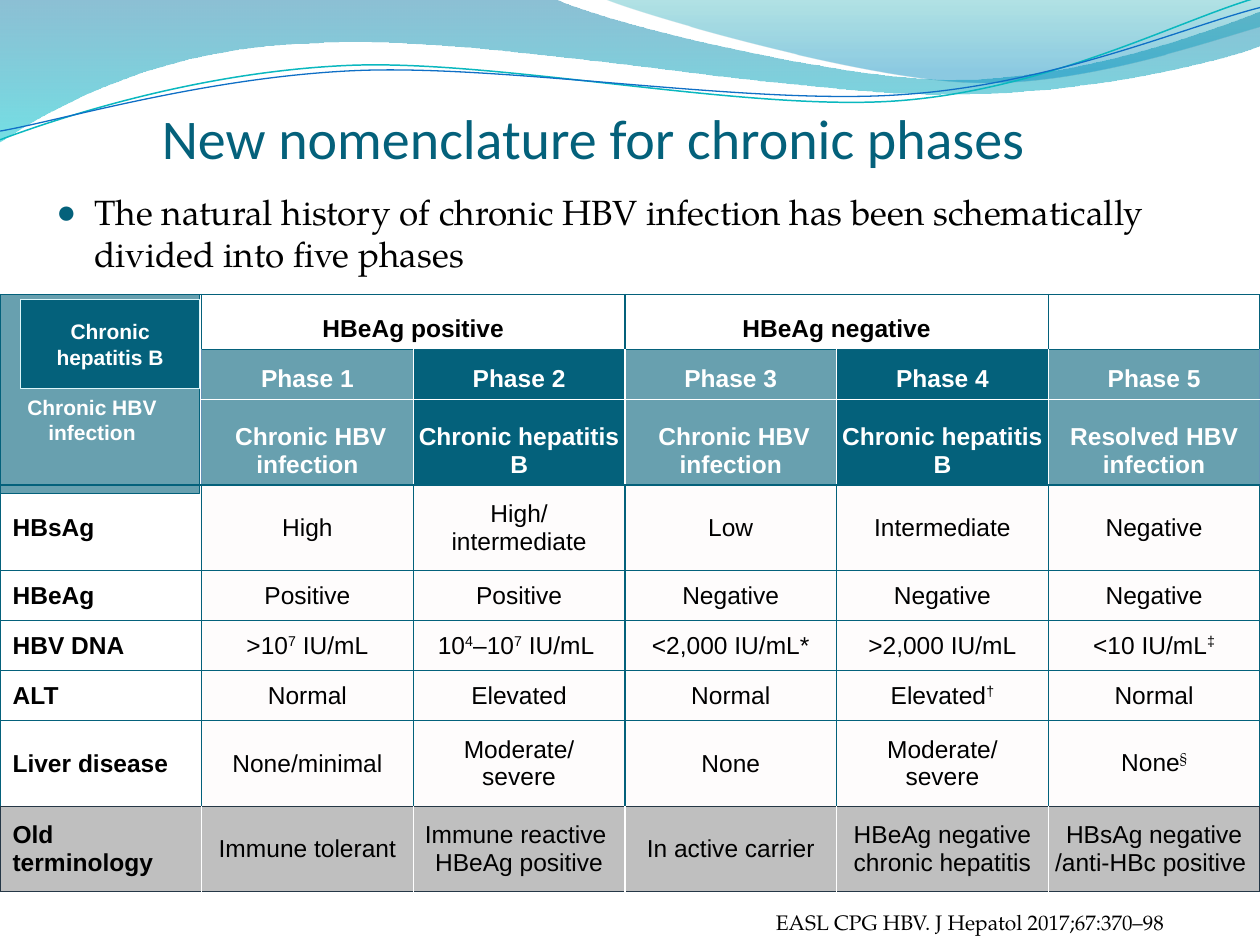
from lxml import etree
from pptx import Presentation
from pptx.dml.color import RGBColor
from pptx.enum.shapes import MSO_SHAPE
from pptx.enum.text import MSO_ANCHOR, PP_ALIGN
from pptx.oxml.ns import qn
from pptx.util import Pt

LEFT, CENTER = PP_ALIGN.LEFT, PP_ALIGN.CENTER
TOP, MIDDLE, BOTTOM = MSO_ANCHOR.TOP, MSO_ANCHOR.MIDDLE, MSO_ANCHOR.BOTTOM
RECTANGLE = MSO_SHAPE.RECTANGLE
SANS, SERIF, HEADING = "Arial", "TeX Gyre Pagella", "Calibri"
TEAL, DARK, EDGE, WHITE, BLACK = "04617B", "253746", "6693B7", "FFFFFF", "000000"
PALE, GREY = "FEFCFC", "BFBFBF"

BANDS = [
    ((0, 0), [(316.8, -0.7), (342.7, 12.2, 478, 45.4, 545.8, 45.4),
              (614.2, 45.4, 689.8, 18.7, 720, 6.5), (720.7, 25.9),
              (707.8, 31.7, 626.4, 54.7, 537.1, 54),
              (447.8, 54, 275, 20.2, 185, 24.5),
              (92.9, 25.9, 33.1, 59.8, -0.7, 81.4)],
     [(0, "0074A1", 45), (1, "00C6CF", 55)]),
    ((344.9, -0.7), [(366.5, 8.6, 491, 44.6, 553.7, 46.8),
                     (616.3, 49.7, 691.9, 23, 720, 15.1), (720, 0)],
     [(0, "00A1A9", 30), (0.8, "008BBF", 45)]),
]
WAVES = [
    ((0, 79.9), [(34.6, 67, 113.8, 41, 199.4, 37.4),
                 (284.4, 33.8, 427, 64.1, 513.4, 57.6),
                 (599.8, 51.1, 675.4, 10.8, 718.6, -1.4)], "0AB8BF", 0.85),
    ((0, 74.9), [(33.8, 69.1, 118.1, 43.9, 203.8, 40.3),
                 (290.2, 36.7, 429.8, 60.5, 516.2, 54),
                 (601.9, 48.2, 677.5, 15.1, 720, 4.3)], "0F6FC6", 0.75),
]
ROWS = [
    ["", "HBeAg positive", "", "HBeAg negative", "", ""],
    ["", "Phase 1", "Phase 2", "Phase 3", "Phase 4", "Phase 5"],
    ["", " Chronic HBV infection", "Chronic hepatitis B", " Chronic HBV infection",
     "Chronic hepatitis B", "Resolved HBV infection"],
    ["HBsAg", "High", "High/|intermediate", "Low", "Intermediate", "Negative"],
    ["HBeAg", "Positive", "Positive", "Negative", "Negative", "Negative"],
    ["HBV DNA", ">10^7^ IU/mL", "10^4^–10^7^ IU/mL ", "<2,000 IU/mL*",
     ">2,000 IU/mL", "<10 IU/mL^‡"],
    ["ALT", "Normal", "Elevated", "Normal", "Elevated^†", "Normal"],
    ["Liver disease", "None/minimal", "Moderate/|severe", "None",
     "Moderate/|severe", "None^§"],
    ["Old terminology", "Immune tolerant", "Immune reactive |HBeAg positive",
     "In active carrier", "HBeAg negative chronic hepatitis",
     "HBsAg negative|/anti-HBc positive "],
]
SHORT, TALL = 28.65, 48.85
HEIGHTS = [31.4, SHORT, TALL, TALL, SHORT, SHORT, SHORT, TALL, TALL]
WIDTHS = [115.2] + [120.96] * 5
TIGHT_CELLS = [(8, 2), (8, 4)]
LAST_ROW, LAST_COLUMN = len(ROWS) - 1, len(WIDTHS) - 1


def rgb(value):
    return RGBColor.from_string(value)


def set_alpha(color_node, percent):
    etree.SubElement(color_node, qn("a:alpha"), val=str(percent * 1000))


def set_fill(fill, color, alpha=100):
    fill.solid()
    fill.fore_color.rgb = rgb(color)
    if alpha < 100:
        set_alpha(fill._xPr.find(".//" + qn("a:srgbClr")), alpha)


def set_line(shape, color, width):
    shape.line.color.rgb = rgb(color)
    shape.line.width = Pt(width)


def add_break(paragraph, size):
    paragraph.add_line_break()
    etree.SubElement(paragraph._p[-1], qn("a:rPr"), sz=str(size * 100))


def write(frame, text, size, font, color, bold=False, align=LEFT):
    for index, block in enumerate(text.split("\n")):
        paragraph = frame.add_paragraph() if index else frame.paragraphs[0]
        paragraph.alignment = align
        for number, line in enumerate(block.split("|")):
            if number:
                add_break(paragraph, size)
            for order, piece in enumerate(line.split("^")):
                span = paragraph.add_run()
                span.text = piece
                span.font.size = Pt(size)
                span.font.name = SERIF if piece == "§" else font
                span.font.bold = bold
                span.font.color.rgb = rgb(color)
                if order % 2:
                    span.font._element.set("baseline", "30000")


def set_frame(frame, anchor, insets):
    frame.word_wrap = True
    frame.vertical_anchor = anchor
    frame.margin_left, frame.margin_top, frame.margin_right, frame.margin_bottom = map(Pt, insets)


def add_text(page, place, text, size, font, color, anchor=TOP,
             insets=(7.2, 3.6, 7.2, 3.6), **style):
    frame = page.shapes.add_textbox(*map(Pt, place)).text_frame
    set_frame(frame, anchor, insets)
    write(frame, text, size, font, color, **style)
    return frame


def add_box(page, place, alpha, line, width):
    box = page.shapes.add_shape(RECTANGLE, *map(Pt, place))
    box.shadow.inherit = False
    set_fill(box.fill, TEAL, alpha)
    set_line(box, line, width)
    return box


def add_curve(page, start, segments, close):
    points = [(Pt(x), Pt(y)) for segment in segments
              for x, y in zip(segment[::2], segment[1::2])]
    builder = page.shapes.build_freeform(*map(Pt, start))
    builder.add_line_segments(points, close=close)
    curve = builder.convert_to_shape()
    curve.shadow.inherit = False
    lines = iter(curve._element.findall(".//" + qn("a:lnTo")))
    for segment in segments:
        first = next(lines)
        if len(segment) == 6:
            first.addprevious(bezier := etree.Element(qn("a:cubicBezTo")))
            for line in (first, next(lines), next(lines)):
                bezier.append(line[0])
                line.getparent().remove(line)
    return curve


def cell_fill(row, column):
    if row == LAST_ROW:
        return GREY, 100
    if row == 0 or (column == 0 and row > 2):
        return WHITE, 100
    if row < 3:
        return TEAL, 100 if column in (2, 4) else 60
    return PALE, 100


def cell_borders(row, column):
    left = right = top = bottom = TEAL
    if row in (1, 2) and column:
        left = EDGE if column == 1 else WHITE
        right = EDGE if column == LAST_COLUMN else WHITE
        top, bottom = (TEAL, WHITE) if row == 1 else (WHITE, TEAL)
    elif row == LAST_ROW:
        left = WHITE if column else DARK
        right = DARK if column == LAST_COLUMN else WHITE
        top = bottom = DARK
    elif row == LAST_ROW - 1:
        bottom = DARK
    return {"a:lnL": left, "a:lnR": right, "a:lnT": top, "a:lnB": bottom}


def set_borders(cell, borders):
    properties = cell._tc.get_or_add_tcPr()
    for position, (tag, color) in enumerate(borders.items()):
        line = etree.Element(qn(tag), w=str(Pt(0.75)))
        solid = etree.SubElement(line, qn("a:solidFill"))
        etree.SubElement(solid, qn("a:srgbClr"), val=color)
        properties.insert(position, line)


def add_phase_table(page):
    table = page.shapes.add_table(len(ROWS), len(WIDTHS), 0, Pt(168.3),
                                  Pt(sum(WIDTHS)), Pt(sum(HEIGHTS))).table
    table.first_row = table.horz_banding = False
    for column, width in zip(table.columns, WIDTHS):
        column.width = Pt(width)
    for row, height in zip(table.rows, HEIGHTS):
        row.height = Pt(height)
    for first, last in [((0, 0), (2, 0)), ((0, 1), (0, 2)), ((0, 3), (0, 4))]:
        table.cell(*first).merge(table.cell(*last))
    for row, texts in enumerate(ROWS):
        for column, text in enumerate(texts):
            cell = table.cell(row, column)
            if column == 0 and row < 3:
                cell.fill.background()
            else:
                set_fill(cell.fill, *cell_fill(row, column))
            set_borders(cell, cell_borders(row, column))
            cell.vertical_anchor = BOTTOM if row < 3 else MIDDLE
            if row and column:
                side = 0 if (row, column) in TIGHT_CELLS else 2.9
                cell.margin_left = cell.margin_right = Pt(side)
            if text:
                write(cell.text_frame, text, 14, SANS,
                      WHITE if row in (1, 2) else BLACK,
                      bold=row < 3 or column == 0, align=CENTER if column else LEFT)
            else:
                cell.text_frame.paragraphs[0].font.size = Pt(14)


def add_bullet(paragraph):
    paragraph.space_before = Pt(4)
    properties = paragraph._p.get_or_add_pPr()
    properties.set("marL", str(Pt(21.6)))
    properties.set("indent", str(Pt(-21.6)))
    color = etree.SubElement(properties, qn("a:buClr"))
    etree.SubElement(color, qn("a:srgbClr"), val=TEAL)
    etree.SubElement(properties, qn("a:buSzPct"), val="95000")
    etree.SubElement(properties, qn("a:buFont"), typeface=SANS)
    etree.SubElement(properties, qn("a:buChar"), char="●")


def main():
    deck = Presentation()
    deck.slide_width, deck.slide_height = Pt(720), Pt(540)
    page = deck.slides.add_slide(deck.slide_layouts[6])
    for start, segments, stops in BANDS:
        band = add_curve(page, start, segments, True)
        band.line.fill.background()
        band.fill.gradient()
        band.fill.gradient_angle = 270
        for stop, (position, color, alpha) in zip(band.fill.gradient_stops, stops):
            stop.position = position
            stop.color.rgb = rgb(color)
            set_alpha(stop._gs.find(qn("a:srgbClr")), alpha)
    for start, segments, color, width in WAVES:
        wave = add_curve(page, start, segments, False)
        wave.fill.background()
        set_line(wave, color, width)
    add_phase_table(page)
    add_box(page, (0, 168.3, 114, 113.6), 60, TEAL, 0.75)
    add_text(page, (92.5, 29.5, 531, 68), "New nomenclature for chronic phases",
             32, HEADING, TEAL, BOTTOM, (0, 3.6, 0, 0))
    add_text(page, (443.4, 510, 260, 24), "EASL CPG HBV. J Hepatol 2017;67:370–98",
             12, SERIF, BLACK, BOTTOM, (0, 0, 0, 0))
    summary = add_text(page, (25.2, 105.4, 669.6, 60),
                       "The natural history of chronic HBV infection has been "
                       "schematically divided into ﬁve phases", 20, SERIF, BLACK)
    add_bullet(summary.paragraphs[0])
    add_text(page, (-8.6, 221.8, 122.4, 36), "Chronic HBV\ninfection",
             12, SANS, WHITE, bold=True, align=CENTER)
    hepatitis = add_box(page, (12, 171.4, 102, 50.4), 100, "DBF5F9", 0.5)
    set_frame(hepatitis.text_frame, MIDDLE, (7.2, 3.6, 7.2, 3.6))
    write(hepatitis.text_frame, "Chronic hepatitis B", 12, SANS, WHITE, True, CENTER)
    deck.save("out.pptx")


if __name__ == "__main__":
    main()
